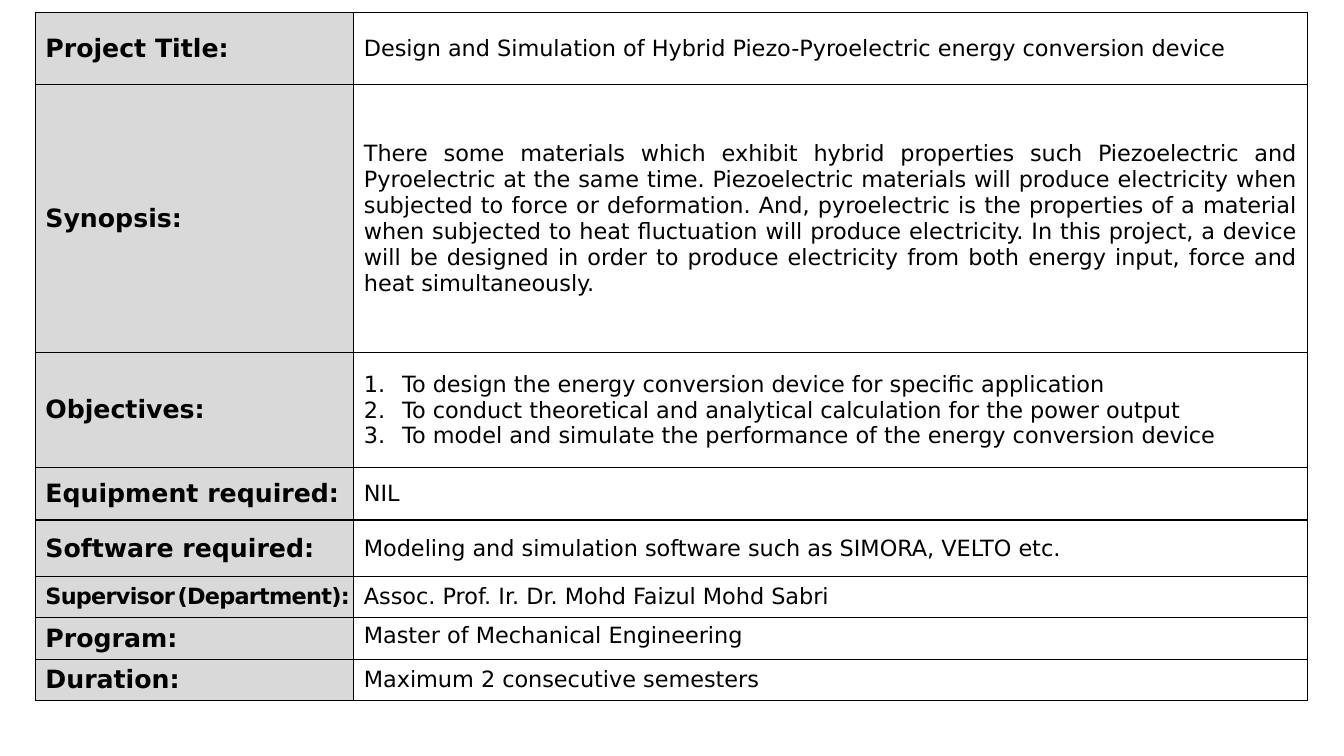
from dataclasses import dataclass

import pptx
import pptx.dml.color
import pptx.enum.text
import pptx.oxml
import pptx.oxml.ns
import pptx.table
import pptx.text.text
import pptx.util
from lxml import etree

ANCHOR = pptx.enum.text.MSO_ANCHOR
ALIGN = pptx.enum.text.PP_ALIGN

FONT = "DejaVu Sans"
BLACK, GREY, WHITE = "000000", "D9D9D9", "FFFFFF"
LABEL_SIZE, BODY_SIZE = 18, 16
SLIDE_W, SLIDE_H = pptx.util.Inches(13.33), pptx.util.Inches(7.5)

# Percentages of the slide's width and height
TABLE_LEFT, TABLE_TOP = 2.63, 1.6
COLUMN_WIDTHS = (23.7, 70.97)


@dataclass(frozen=True)
class Run:
    text: str
    size: float
    bold: bool = False
    spacing: float = 0


@dataclass(frozen=True)
class Field:
    """One table row: a label and its value, with height in percent."""
    height: float
    label: tuple[Run, ...]
    value: tuple[str, ...]
    align: ALIGN = ALIGN.LEFT
    anchor: ANCHOR = ANCHOR.MIDDLE
    numbered: bool = False
    tight: bool = False


def label(text: str) -> tuple[Run, ...]:
    return (Run(text, LABEL_SIZE, True),)


FIELDS = (
    Field(9.6, label("Project Title:"),
          ("Design and Simulation of Hybrid Piezo-Pyroelectric energy conversion device",)),
    Field(35.47, label("Synopsis:"),
          ("There some materials which exhibit hybrid properties such Piezoelectric and "
           "Pyroelectric at the same time. Piezoelectric materials will produce electricity "
           "when subjected to force or deformation. And, pyroelectric is the properties of a "
           "material when subjected to heat fluctuation will produce electricity. In this "
           "project, a device will be designed in order to produce electricity from both "
           "energy input, force and heat simultaneously.",),
          align=ALIGN.JUSTIFY),
    Field(15.2, label("Objectives:"),
          ("To design the energy conversion device for specific application",
           "To conduct theoretical and analytical calculation for the power output",
           "To model and simulate the performance of the energy conversion device"),
          numbered=True),
    Field(6.93, label("Equipment required:"), ("NIL",)),
    Field(7.47, label("Software required:"),
          ("Modeling and simulation software such as SIMORA, VELTO etc.",)),
    Field(5.47,
          (Run("Supervisor", BODY_SIZE, True, -0.5), Run(" ", 5, True, -0.5),
           Run("(Department):", BODY_SIZE, True, -0.5)),
          ("Assoc. Prof. Ir. Dr. Mohd Faizul Mohd Sabri",), tight=True),
    Field(5.47, label("Program:"), ("Master of Mechanical Engineering",), anchor=ANCHOR.TOP),
    Field(5.47, label("Duration:"), ("Maximum 2 consecutive semesters",)),
)


def across(percent: float) -> int:
    return round(SLIDE_W * percent / 100)


def down(percent: float) -> int:
    return round(SLIDE_H * percent / 100)


def colour(value: str) -> pptx.dml.color.RGBColor:
    return pptx.dml.color.RGBColor.from_string(value)


def style_cell(cell: pptx.table._Cell, fill: str, anchor: ANCHOR) -> None:
    tc_pr = cell._tc.get_or_add_tcPr()
    for side in ("lnL", "lnR", "lnT", "lnB"):
        tc_pr.append(pptx.oxml.parse_xml(
            f'<a:{side} {pptx.oxml.ns.nsdecls("a")} w="{pptx.util.Pt(1)}"><a:solidFill>'
            f'<a:srgbClr val="{BLACK}"/></a:solidFill></a:{side}>'))
    cell.fill.solid()
    cell.fill.fore_color.rgb = colour(fill)
    cell.vertical_anchor = anchor


def add_runs(p: pptx.text.text._Paragraph, runs: tuple[Run, ...]) -> None:
    for run in runs:
        r = p.add_run()
        r.text = run.text
        r.font.name = FONT
        r.font.size = pptx.util.Pt(run.size)
        r.font.bold = run.bold
        r.font.color.rgb = colour(BLACK)
        if run.spacing:
            r._r.get_or_add_rPr().set("spc", str(round(run.spacing * 100)))


def number_paragraph(p: pptx.text.text._Paragraph) -> None:
    p_pr = p._p.get_or_add_pPr()
    indent = pptx.util.Inches(0.38)
    p_pr.set("marL", str(indent))
    p_pr.set("indent", str(-indent))
    etree.SubElement(p_pr, pptx.oxml.ns.qn("a:buFont"), typeface="+mj-lt")
    etree.SubElement(p_pr, pptx.oxml.ns.qn("a:buAutoNum"), type="arabicPeriod")


def fill_row(table: pptx.table.Table, index: int, field: Field) -> None:
    table.rows[index].height = down(field.height)
    label_cell, value_cell = table.cell(index, 0), table.cell(index, 1)

    style_cell(label_cell, GREY, ANCHOR.MIDDLE)
    if field.tight:
        label_cell.margin_right = 0
    add_runs(label_cell.text_frame.paragraphs[0], field.label)

    style_cell(value_cell, WHITE, field.anchor)
    tf = value_cell.text_frame
    for i, text in enumerate(field.value):
        p = tf.add_paragraph() if i else tf.paragraphs[0]
        p.alignment = field.align
        if field.numbered:
            number_paragraph(p)
        add_runs(p, (Run(text, BODY_SIZE),))


def main() -> None:
    prs = pptx.Presentation()
    prs.slide_width, prs.slide_height = SLIDE_W, SLIDE_H
    s = prs.slides.add_slide(prs.slide_layouts[6])
    table = s.shapes.add_table(
        len(FIELDS), len(COLUMN_WIDTHS), across(TABLE_LEFT), down(TABLE_TOP),
        across(sum(COLUMN_WIDTHS)), down(sum(field.height for field in FIELDS))).table
    table.first_row = table.horz_banding = False
    for column, width in zip(table.columns, COLUMN_WIDTHS):
        column.width = across(width)
    for index, field in enumerate(FIELDS):
        fill_row(table, index, field)
    prs.save("out.pptx")


if __name__ == "__main__":
    main()
